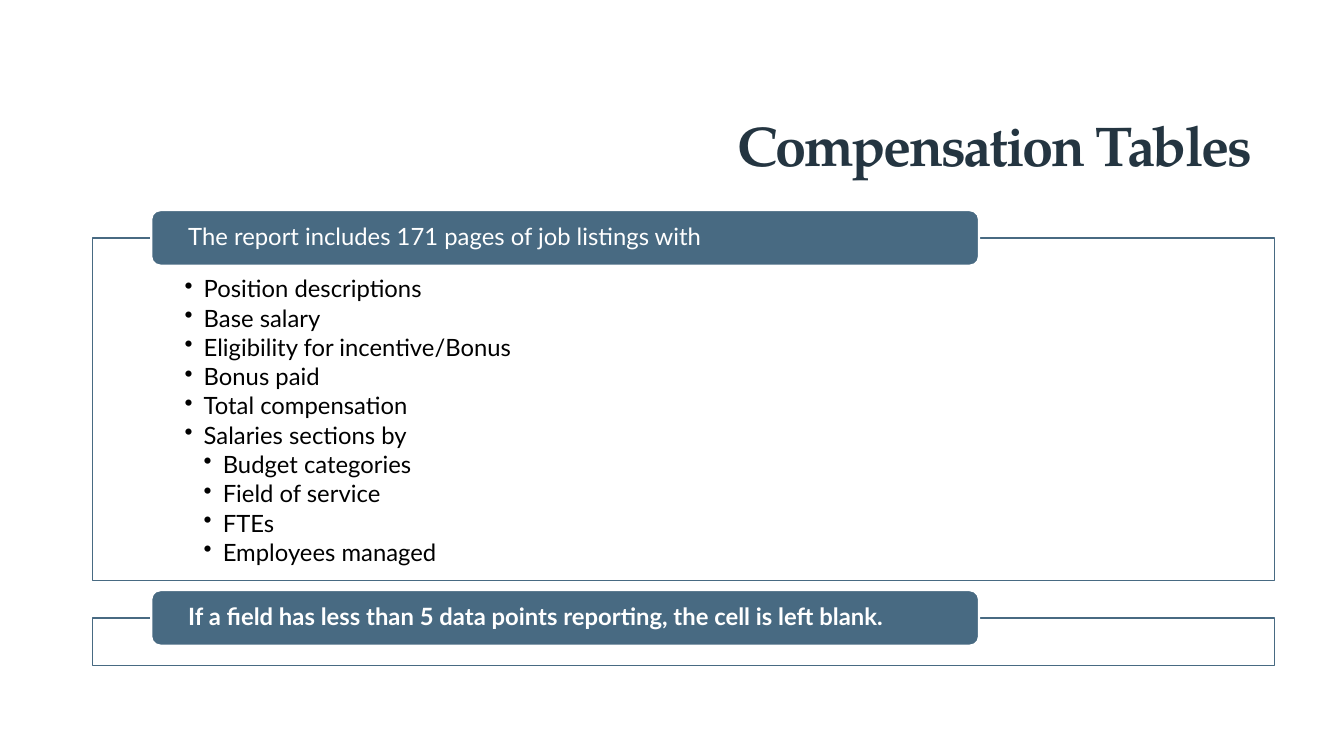
from lxml import etree
from pptx import Presentation
from pptx.dml.color import RGBColor
from pptx.enum.shapes import MSO_SHAPE as Preset
from pptx.enum.text import MSO_ANCHOR as Anchor, PP_ALIGN as Align
from pptx.oxml.ns import qn
from pptx.util import Inches, Pt

COLORS = {"navy": "243541", "steel": "486A82", "white": "FFFFFF", "black": "000000"}
HEADING_FONT, BODY_FONT = "TeX Gyre Pagella", "Lato"
BULLET_STEP = 0.19

FRAME_LEFT, FRAME_WIDTH = 0.92, 11.72
LABEL_LEFT, LABEL_WIDTH, LABEL_HEIGHT = 1.5, 8.21, 0.55
LABEL_RISE = 0.275  # the label is centred on the top edge of its frame

# Frame top, frame height, label, label in bold, bullets as (level, text)
sections = [
    (2.36, 3.4, "The report includes 171 pages of job listings with", False, [
        (1, "Position descriptions"),
        (1, "Base salary"),
        (1, "Eligibility for incentive/Bonus"),
        (1, "Bonus paid"),
        (1, "Total compensation"),
        (1, "Salaries sections by"),
        (2, "Budget categories"),
        (2, "Field of service"),
        (2, "FTEs"),
        (2, "Employees managed"),
    ]),
    (6.13, 0.47,
     "If a field has less than 5 data points reporting, the cell is left blank.",
     True, []),
]


def set_frame(shape, anchor, left, top, right, bottom):
    frame = shape.text_frame
    values = {"word_wrap": True, "vertical_anchor": anchor,
              "margin_left": Inches(left), "margin_top": Inches(top),
              "margin_right": Inches(right), "margin_bottom": Inches(bottom)}
    for name, value in values.items():
        setattr(frame, name, value)
    return frame


def write(paragraph, text, font, size, color, bold, align, space_after):
    run = paragraph.add_run()
    run.text = text
    for name, value in {"name": font, "size": Pt(size), "bold": bold}.items():
        setattr(run.font, name, value)
    run.font.color.rgb = RGBColor.from_string(COLORS[color])
    paragraph.alignment = align
    paragraph.line_spacing = 0.9
    paragraph.space_after = Pt(space_after)
    return run


presentation = Presentation()
presentation.slide_width, presentation.slide_height = Inches(13.33), Inches(7.5)
slide = presentation.slides.add_slide(presentation.slide_layouts[6])

# Title
title = slide.shapes.add_textbox(Inches(1.34), Inches(0.33), Inches(11.3), Inches(1.49))
title_frame = set_frame(title, Anchor.BOTTOM, 0, 0.05, 0.22, 0.05)
title_run = write(title_frame.paragraphs[0], "Compensation Tables",
                  HEADING_FONT, 40, "navy", True, Align.RIGHT, 6)
title_run.font._element.set("spc", "-150")

for frame_top, frame_height, label_text, label_bold, bullets in sections:
    # Outlined frame and the label on its top edge
    frame_box = slide.shapes.add_shape(
        Preset.RECTANGLE, Inches(FRAME_LEFT), Inches(frame_top),
        Inches(FRAME_WIDTH), Inches(frame_height))
    label = slide.shapes.add_shape(
        Preset.ROUNDED_RECTANGLE, Inches(LABEL_LEFT), Inches(frame_top - LABEL_RISE),
        Inches(LABEL_WIDTH), Inches(LABEL_HEIGHT))
    for shape, fill, line, width in [(frame_box, "white", "steel", 1),
                                     (label, "steel", "white", 1.5)]:
        shape.shadow.inherit = False
        shape.fill.solid()
        shape.fill.fore_color.rgb = RGBColor.from_string(COLORS[fill])
        shape.line.color.rgb = RGBColor.from_string(COLORS[line])
        shape.line.width = Pt(width)
    frame_color = frame_box._element.spPr.find(qn("a:solidFill"))[0]
    etree.SubElement(frame_color, qn("a:alpha")).set("val", "90000")

    label_frame = set_frame(label, Anchor.MIDDLE, 0.34, 0, 0.34, 0)
    write(label_frame.paragraphs[0], label_text, BODY_FONT, 17, "white",
          label_bold, Align.LEFT, 0)

    # Bulleted list inside the frame
    if bullets:
        list_frame = set_frame(frame_box, Anchor.TOP, 0.91, 0.39, 0.91, 0.13)
    for index, (level, text) in enumerate(bullets):
        paragraph = list_frame.add_paragraph() if index else list_frame.paragraphs[0]
        paragraph.level = level
        properties = paragraph._p.get_or_add_pPr()
        properties.set("marL", str(Inches(BULLET_STEP * level)))
        properties.set("indent", str(-Inches(BULLET_STEP)))
        etree.SubElement(properties, qn("a:buChar")).set("char", "•")
        write(paragraph, text, BODY_FONT, 17, "black", False, Align.LEFT, 2.55)

presentation.save("out.pptx")
